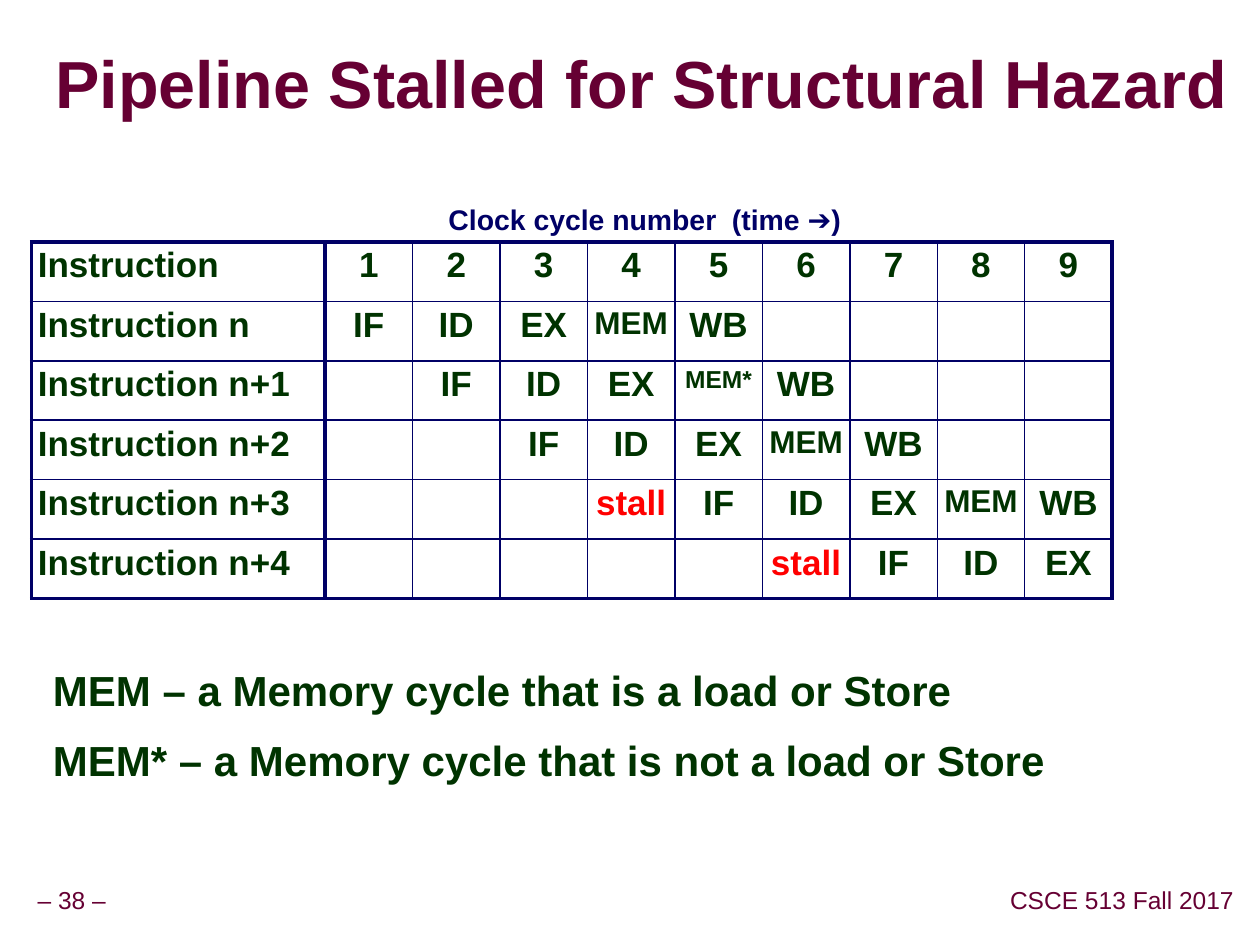
"""Build a slide on a pipeline stalled by a structural hazard."""
from lxml import etree
from pptx import Presentation
from pptx import util as u
from pptx.dml.color import RGBColor
from pptx.enum import text
from pptx.oxml import ns

MAROON = RGBColor(0x66, 0x00, 0x33)
GREEN = RGBColor(0x00, 0x33, 0x00)
NAVY = RGBColor(0x00, 0x00, 0x66)
RED = RGBColor(0xFF, 0x00, 0x00)
GREY = RGBColor(0x96, 0x96, 0x96)
FONT = "Arial"
OUTER, INNER = 2.25, 1
TABLE_TOP, TABLE_HEIGHT = 1.92, 2.83
CYCLES = 9
STAGE_SIZES = {"MEM": 18, "MEM*": 14}
SCHEDULE = [
    (1, ["IF", "ID", "EX", "MEM", "WB"]),
    (2, ["IF", "ID", "EX", "MEM*", "WB"]),
    (3, ["IF", "ID", "EX", "MEM", "WB"]),
    (4, ["stall", "IF", "ID", "EX", "MEM", "WB"]),
    (6, ["stall", "IF", "ID", "EX"]),
]
LEGEND = [
    "MEM – a Memory cycle that is a load or Store",
    "MEM* – a Memory cycle that is not a load or Store",
]


def set_all(target, values):
    """Set each named attribute of the target."""
    for name, value in values.items():
        setattr(target, name, value)


def child(parent, tag, **attributes):
    """Append a DrawingML element to the parent."""
    return etree.SubElement(parent, ns.qn(tag), attributes)


def write(paragraph, wording, size, colour, bold=True, spacing=0.95, align=text.PP_ALIGN.LEFT):
    """Fill a paragraph with one formatted run and return the run."""
    set_all(paragraph, {"alignment": align, "line_spacing": spacing,
                        "space_before": u.Pt(0)})
    run = paragraph.add_run()
    run.text = wording
    set_all(run.font, {"name": FONT, "size": u.Pt(size), "bold": bold})
    run.font.color.rgb = colour
    return run


def place(shape, left, top, width, height):
    """Move and size a shape, given inches."""
    set_all(shape, {"left": u.Inches(left), "top": u.Inches(top),
                    "width": u.Inches(width), "height": u.Inches(height)})


def set_frame(frame, anchor, side, edge, wrap=True):
    """Give a text frame its anchor, insets and wrapping."""
    set_all(frame, {"auto_size": text.MSO_AUTO_SIZE.NONE, "word_wrap": wrap,
                    "vertical_anchor": anchor,
                    "margin_left": u.Inches(side), "margin_right": u.Inches(side),
                    "margin_top": u.Inches(edge), "margin_bottom": u.Inches(edge)})


def add_heading(slide):
    """Write the shadowed title."""
    heading = slide.shapes.title
    place(heading, 0.44, 0.27, 9.53, 0.85)
    set_frame(heading.text_frame, text.MSO_ANCHOR.MIDDLE, 0, 0)
    run = write(heading.text_frame.paragraphs[0],
                "Pipeline Stalled for Structural Hazard", 38, MAROON, spacing=0.87)
    effects = etree.Element(ns.qn("a:effectLst"))
    shadow = child(effects, "a:outerShdw", dist="35921", dir="2700000", algn="ctr")
    child(shadow, "a:srgbClr", val=str(GREY))
    run.font.fill.solid()
    run.font.color.rgb = MAROON
    run.font._element.find(ns.qn("a:solidFill")).addnext(effects)


def add_legend(slide):
    """Explain the two kinds of memory cycle in the body placeholder."""
    legend = slide.placeholders[1]
    place(legend, 0.32, 5.25, 9.09, 1.8)
    frame = legend.text_frame
    set_frame(frame, text.MSO_ANCHOR.TOP, 0.1, 0.05)
    for index, wording in enumerate(LEGEND):
        paragraph = frame.add_paragraph() if index else frame.paragraphs[0]
        write(paragraph, wording, 24, GREEN)
        paragraph.space_after = u.Pt(13)
        properties = paragraph._p.get_or_add_pPr()
        properties.set("marL", str(u.Inches(0.38)))
        properties.set("indent", str(-u.Inches(0.38)))
        child(properties, "a:buNone")


def add_label(slide, box, wording, size, colour, anchor, **style):
    """Add a one-line text box and return its run."""
    label = slide.shapes.add_textbox(0, 0, 0, 0)
    place(label, *box)
    set_frame(label.text_frame, anchor, 0.05, 0.05)
    return write(label.text_frame.paragraphs[0], wording, size, colour,
                 spacing=0.9, **style)


def draw_borders(cell, widths):
    """Draw the cell's four borders with the given point widths."""
    properties = cell._tc.get_or_add_tcPr()
    for side, width in zip("LRTB", widths):
        line = child(properties, "a:ln" + side, w=str(u.Pt(width)))
        child(child(line, "a:solidFill"), "a:srgbClr", val=str(NAVY))


def add_grid(slide, left, width, rows, align):
    """Add a table with even rows and columns and a heavy outline."""
    row_count, column_count = len(rows), len(rows[0])
    table = slide.shapes.add_table(
        row_count, column_count, u.Inches(left), u.Inches(TABLE_TOP),
        u.Inches(width), u.Inches(TABLE_HEIGHT)).table
    set_all(table, {"first_row": False, "horz_banding": False})
    for column in table.columns:
        column.width = u.Inches(width / column_count)
    for y, wordings in enumerate(rows):
        table.rows[y].height = u.Inches(TABLE_HEIGHT / row_count)
        for x, wording in enumerate(wordings):
            cell = table.cell(y, x)
            edges = (x == 0, x == column_count - 1, y == 0, y == row_count - 1)
            draw_borders(cell, [OUTER if edge else INNER for edge in edges])
            cell.fill.background()
            set_all(cell, dict.fromkeys(
                ["margin_left", "margin_right", "margin_top", "margin_bottom"],
                u.Inches(0.05)))
            if wording:
                write(cell.text_frame.paragraphs[0], wording,
                      STAGE_SIZES.get(wording, 20),
                      RED if wording == "stall" else GREEN, align=align)


def schedule_rows():
    """Return the cycle numbers and the stages of each instruction."""
    rows = [[str(cycle) for cycle in range(1, CYCLES + 1)]]
    for start, stages in SCHEDULE:
        row = [""] * (start - 1) + stages
        rows.append(row + [""] * (CYCLES - len(row)))
    return rows


def main():
    """Build and save the slide."""
    deck = Presentation()
    set_all(deck, {"slide_width": u.Inches(10), "slide_height": u.Inches(7.5)})
    slide = deck.slides.add_slide(deck.slide_layouts[1])
    add_heading(slide)
    centre, middle = text.PP_ALIGN.CENTER, text.MSO_ANCHOR.MIDDLE
    for box, wording in [((0.24, 7, 0.66, 0.31), "– 38 –"),
                         ((7.96, 7, 1.89, 0.31), "CSCE 513 Fall 2017")]:
        add_label(slide, box, wording, 14, MAROON, middle, bold=False, align=centre)
    add_grid(slide, 2.58, 6.25, schedule_rows(), centre)
    names = ["Instruction", "Instruction n"]
    names += [f"Instruction n+{step}" for step in range(1, len(SCHEDULE))]
    add_grid(slide, 0.25, 2.33, [[name] for name in names], text.PP_ALIGN.LEFT)
    clock = add_label(slide, (3.51, 1.3, 3.86, 0.39), "Clock cycle number  (time ➔)",
                      28, NAVY, text.MSO_ANCHOR.TOP)
    clock.font._element.set("baseline", "-25000")
    add_legend(slide)
    deck.save("out.pptx")


if __name__ == "__main__":
    main()
